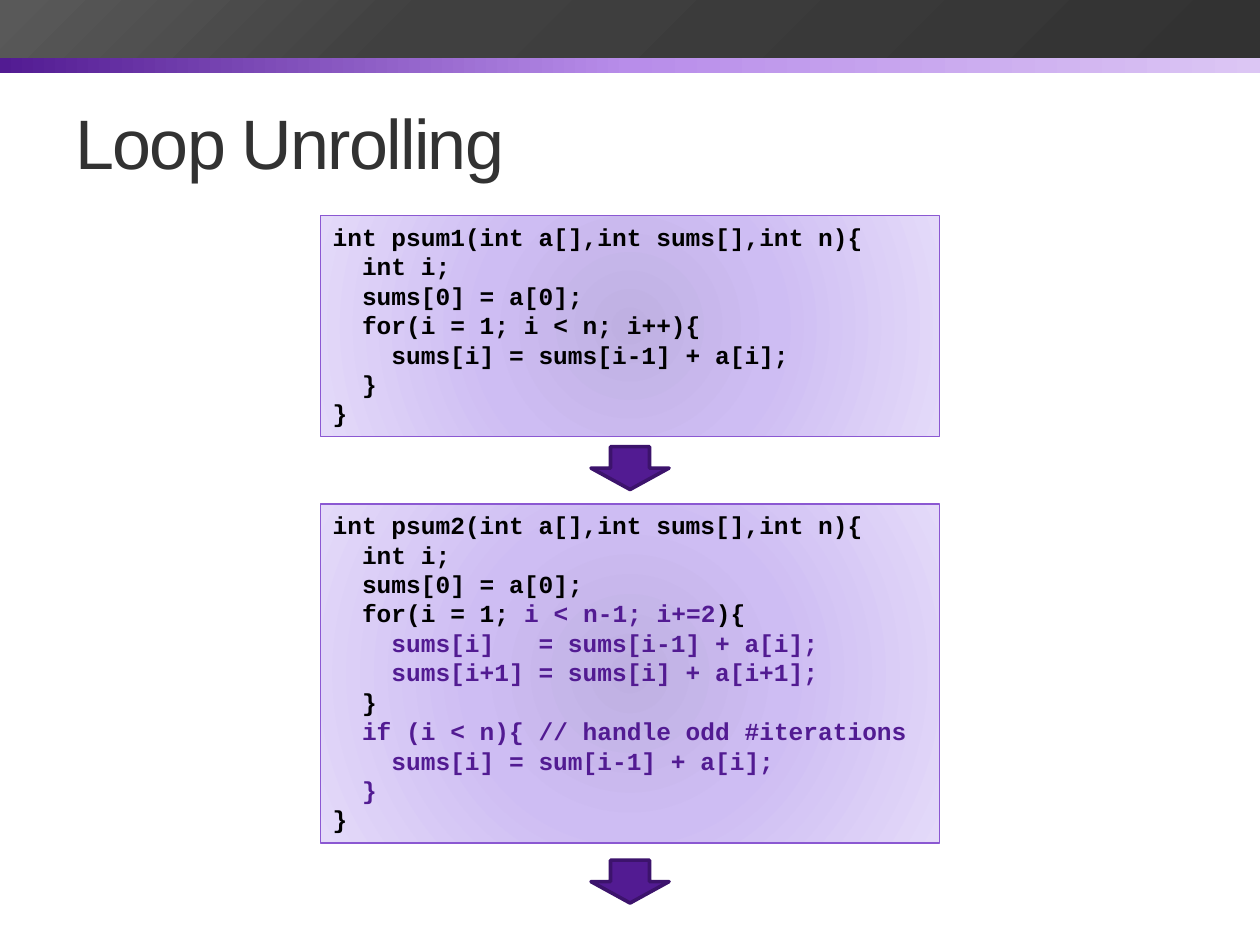
import dataclasses

import lxml.etree
import pptx
import pptx.dml.color
import pptx.enum.shapes
import pptx.enum.text
import pptx.oxml.ns
import pptx.util

Pt = pptx.util.Pt
Shapes = pptx.enum.shapes.MSO_SHAPE
Anchor = pptx.enum.text.MSO_ANCHOR
Align = pptx.enum.text.PP_ALIGN


@dataclasses.dataclass(frozen=True)
class Theme:
    """Colours, fonts and type sizes of the slide."""

    title: str = "323232"
    code: str = "000000"
    accent: str = "521B92"
    arrow_line: str = "3C136C"
    box_line: str = "8B58D2"
    stripe: tuple = ((0, "521B92"), (50, "B88DEA"), (100, "DCC6F4"))
    banner: tuple = ((0, "323232"), (66, "404040"), (99, "595959"))
    box: tuple = ((0, "BFB0E2"), (45, "CEBDF3"), (100, "E4DAF9"))
    title_font: str = "Arial"
    code_font: str = "Courier New"
    title_size: float = 40
    code_size: float = 14
    code_pitch: float = 16.8
    code_step: float = 8.4


THEME = Theme()

PSUM1 = (
    (0, "int psum1(int a[],int sums[],int n){"),
    (2, "int i;"),
    (2, "sums[0] = a[0];"),
    (2, "for(i = 1; i < n; i++){"),
    (4, "sums[i] = sums[i-1] + a[i];"),
    (2, "}"),
    (0, "}"),
)

PSUM2 = (
    (0, "int psum2(int a[],int sums[],int n){"),
    (2, "int i;"),
    (2, "sums[0] = a[0];"),
    (2, "for(i = 1; ", "i < n-1; i+=2", "){"),
    (4, "", "sums[i]   = sums[i-1] + a[i];"),
    (4, "", "sums[i+1] = sums[i] + a[i+1];"),
    (2, "}"),
    (2, "", "if (i < n){ // handle odd #iterations"),
    (4, "", "sums[i] = sum[i-1] + a[i];"),
    (2, "", "}"),
    (0, "}"),
)


def color(value):
    """Turn a hex string into a colour."""
    return pptx.dml.color.RGBColor.from_string(value)


def add_shape(page, kind, left, top, width, height):
    """Add a preset shape with no shadow and no line."""
    shape = page.shapes.add_shape(kind, Pt(left), Pt(top), Pt(width), Pt(height))
    shape.shadow.inherit = False
    shape.line.fill.background()
    return shape


def set_line(shape, value, width):
    """Give a shape a solid outline."""
    shape.line.color.rgb = color(value)
    shape.line.width = Pt(width)


def set_gradient(shape, stops, angle=None):
    """Fill with a linear gradient, or a circular one when no angle is given."""
    qn = pptx.oxml.ns.qn
    shape.fill.gradient()
    gradient = shape.element.spPr.find(qn("a:gradFill"))
    for child in list(gradient):
        gradient.remove(child)
    stop_list = lxml.etree.SubElement(gradient, qn("a:gsLst"))
    for position, value in stops:
        stop = lxml.etree.SubElement(stop_list, qn("a:gs"), pos=str(position * 1000))
        lxml.etree.SubElement(stop, qn("a:srgbClr"), val=value)
    if angle is None:
        circle = lxml.etree.SubElement(gradient, qn("a:path"))
        circle.set("path", "circle")
        center = dict.fromkeys("ltrb", "50000")
        lxml.etree.SubElement(circle, qn("a:fillToRect"), **center)
    else:
        lxml.etree.SubElement(gradient, qn("a:lin"), ang=str(angle * 60000), scaled="0")


def add_band(page, top, height, stops, angle):
    """Add a gradient band across the whole slide."""
    band = add_shape(page, Shapes.RECTANGLE, 0, top, 720, height)
    set_gradient(band, stops, angle)


def set_title(page, text):
    """Place and format the title placeholder."""
    title = page.shapes.title
    title.left, title.top, title.width, title.height = Pt(36), Pt(41.76), Pt(648), Pt(77.76)
    title.text_frame.vertical_anchor = Anchor.MIDDLE
    title.text_frame.text = text
    para = title.text_frame.paragraphs[0]
    para.alignment = Align.LEFT
    para.font.name = THEME.title_font
    para.font.size = Pt(THEME.title_size)
    para.font.color.rgb = color(THEME.title)
    para.runs[0].font._element.set("spc", "-100")


def add_code_box(page, top, height, lines):
    """Add a code listing whose spans alternate plain and accent colours."""
    box = add_shape(page, Shapes.RECTANGLE, 183, top, 354, height)
    set_gradient(box, THEME.box)
    set_line(box, THEME.box_line, 0.75)
    frame = box.text_frame
    frame.word_wrap = True
    frame.vertical_anchor = Anchor.TOP
    frame.auto_size = pptx.enum.text.MSO_AUTO_SIZE.SHAPE_TO_FIT_TEXT
    for number, (indent, *spans) in enumerate(lines):
        para = frame.add_paragraph() if number else frame.paragraphs[0]
        para.alignment = Align.LEFT
        para.line_spacing = Pt(THEME.code_pitch)
        para.font.name = THEME.code_font
        para.font.size = Pt(THEME.code_size)
        para.font.bold = True
        para._p.get_or_add_pPr().set("marL", str(Pt(indent * THEME.code_step)))
        for place, text in enumerate(spans):
            if text:
                span = para.add_run()
                span.text = text
                span.font.color.rgb = color(THEME.accent if place % 2 else THEME.code)


def add_down_arrow(page, middle):
    """Add a downward block arrow centred on the slide at a given height."""
    length, breadth = 24.5, 44.6
    arrow = add_shape(
        page, Shapes.RIGHT_ARROW, 360 - length / 2, middle - breadth / 2, length, breadth
    )
    arrow.rotation = 90
    arrow.fill.solid()
    arrow.fill.fore_color.rgb = color(THEME.accent)
    set_line(arrow, THEME.arrow_line, 2.08)


def main():
    """Build the slide and save it."""
    deck = pptx.Presentation()
    deck.slide_width, deck.slide_height = Pt(720), Pt(540)
    page = deck.slides.add_slide(deck.slide_layouts[5])
    add_band(page, 17.28, 24.48, THEME.stripe, 0)
    add_band(page, 0, 33.12, THEME.banner, 225)
    set_title(page, "Loop Unrolling")
    add_code_box(page, 123.3, 126, PSUM1)
    add_down_arrow(page, 267.5)
    add_code_box(page, 288, 193.7, PSUM2)
    add_down_arrow(page, 503.8)
    deck.save("out.pptx")


if __name__ == "__main__":
    main()
